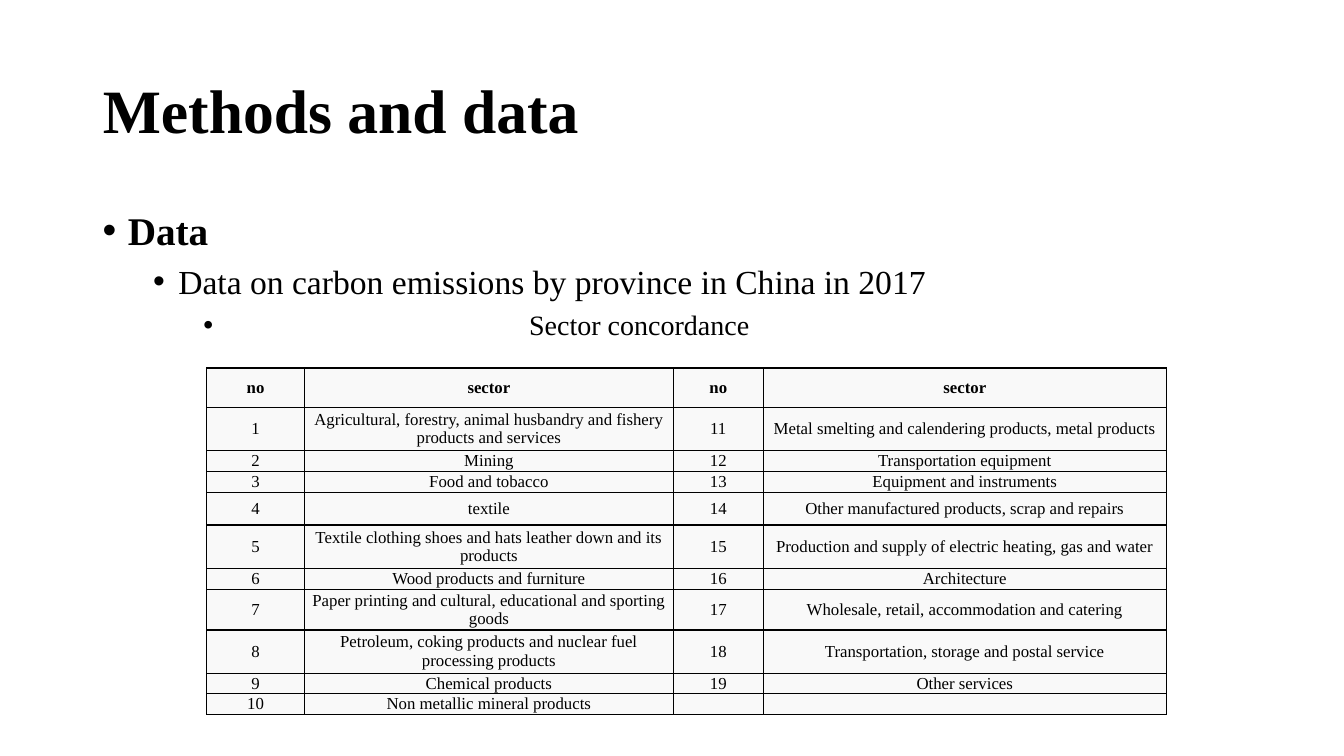
"""Build the "Methods and data" slide with its sector concordance table."""
from lxml import etree
from pptx import Presentation, util as u
from pptx.dml.color import RGBColor
from pptx.enum import text
from pptx.oxml import ns

FONT, INK, PAPER = "Times New Roman", "000000", "F9F9F9"


def rgb(value):
    return RGBColor.from_string(value)


def write(p, words, size=12, bold=False, align=text.PP_ALIGN.LEFT, before=0, spacing=1.0):
    p.alignment, p.space_before, p.line_spacing = align, u.Pt(before), spacing
    r = p.add_run()
    r.text = words
    r.font.name, r.font.size, r.font.bold = FONT, u.Pt(size), bold
    r.font.color.rgb = rgb(INK)


prs = Presentation()
prs.slide_width, prs.slide_height = u.Inches(13.33), u.Inches(7.5)
s = prs.slides.add_slide(prs.slide_layouts[5])

title = s.shapes.title
title.left, title.top, title.width, title.height = map(u.Inches, (0.92, 0.4, 11.5, 1.45))
tf = title.text_frame
tf.auto_size, tf.vertical_anchor = text.MSO_AUTO_SIZE.NONE, text.MSO_ANCHOR.MIDDLE
write(tf.paragraphs[0], "Methods and data", size=44, bold=True, spacing=0.9)

body = s.shapes.add_textbox(*map(u.Inches, (0.92, 2, 11.4, 4.76)))
tf = body.text_frame
tf.word_wrap = True
bullets = [
    ("Data", 28, True, 10, 0.25),
    ("Data on carbon emissions by province in China in 2017", 24, False, 5, 0.75),
    ("Sector concordance", 20, False, 5, 4.23),
]
for level, (words, size, bold, before, margin) in enumerate(bullets):
    p = tf.add_paragraph() if level else tf.paragraphs[0]
    p.level = level
    write(p, words, size=size, bold=bold, before=before)
    pPr = p._p.get_or_add_pPr()
    pPr.set("marL", str(u.Inches(margin)))
    pPr.set("indent", str(u.Inches(level * 0.5 - margin)))
    etree.SubElement(pPr, ns.qn("a:buFont"), typeface="Arial")
    etree.SubElement(pPr, ns.qn("a:buChar"), char="•")

sectors = [
    "Agricultural, forestry, animal husbandry and fishery products and services",
    "Mining",
    "Food and tobacco",
    "textile",
    "Textile clothing shoes and hats leather down and its products",
    "Wood products and furniture",
    "Paper printing and cultural, educational and sporting goods",
    "Petroleum, coking products and nuclear fuel processing products",
    "Chemical products",
    "Non metallic mineral products",
    "Metal smelting and calendering products, metal products",
    "Transportation equipment",
    "Equipment and instruments",
    "Other manufactured products, scrap and repairs",
    "Production and supply of electric heating, gas and water",
    "Architecture",
    "Wholesale, retail, accommodation and catering",
    "Transportation, storage and postal service",
    "Other services",
]
numbered = [(str(no), sector) for no, sector in enumerate(sectors, 1)] + [("", "")]
rows = [("no", "sector") * 2] + [a + b for a, b in zip(numbered[:10], numbered[10:])]
widths = [0.97, 3.66, 0.89, 4]
heights = [0.39, 0.43, 0.21, 0.21, 0.32, 0.43, 0.21, 0.37, 0.43, 0.19, 0.21]

frame = s.shapes.add_table(len(rows), len(widths), u.Inches(2.05), u.Inches(3.65),
                           u.Inches(sum(widths)), u.Inches(sum(heights)))
table = frame.table
table.first_row = table.horz_banding = False
for column, width in zip(table.columns, widths):
    column.width = u.Inches(width)
for i, (row, height) in enumerate(zip(rows, heights)):
    table.rows[i].height = u.Inches(height)
    for j, words in enumerate(row):
        cell = table.cell(i, j)
        cell.vertical_anchor = text.MSO_ANCHOR.MIDDLE
        cell.margin_left = cell.margin_right = u.Inches(0.07)
        cell.margin_top = cell.margin_bottom = 0
        p = cell.text_frame.paragraphs[0]
        if words:
            write(p, words, bold=i == 0, align=text.PP_ALIGN.CENTER)
        else:
            etree.SubElement(p._p, ns.qn("a:endParaRPr"), sz="1200")
        tcPr = cell._tc.get_or_add_tcPr()
        for side in ("lnL", "lnR", "lnT", "lnB"):
            ln = etree.SubElement(tcPr, ns.qn(f"a:{side}"), w=str(u.Pt(1)))
            fill = etree.SubElement(ln, ns.qn("a:solidFill"))
            etree.SubElement(fill, ns.qn("a:srgbClr"), val=INK)
        cell.fill.solid()
        cell.fill.fore_color.rgb = rgb(PAPER)

prs.save("out.pptx")
